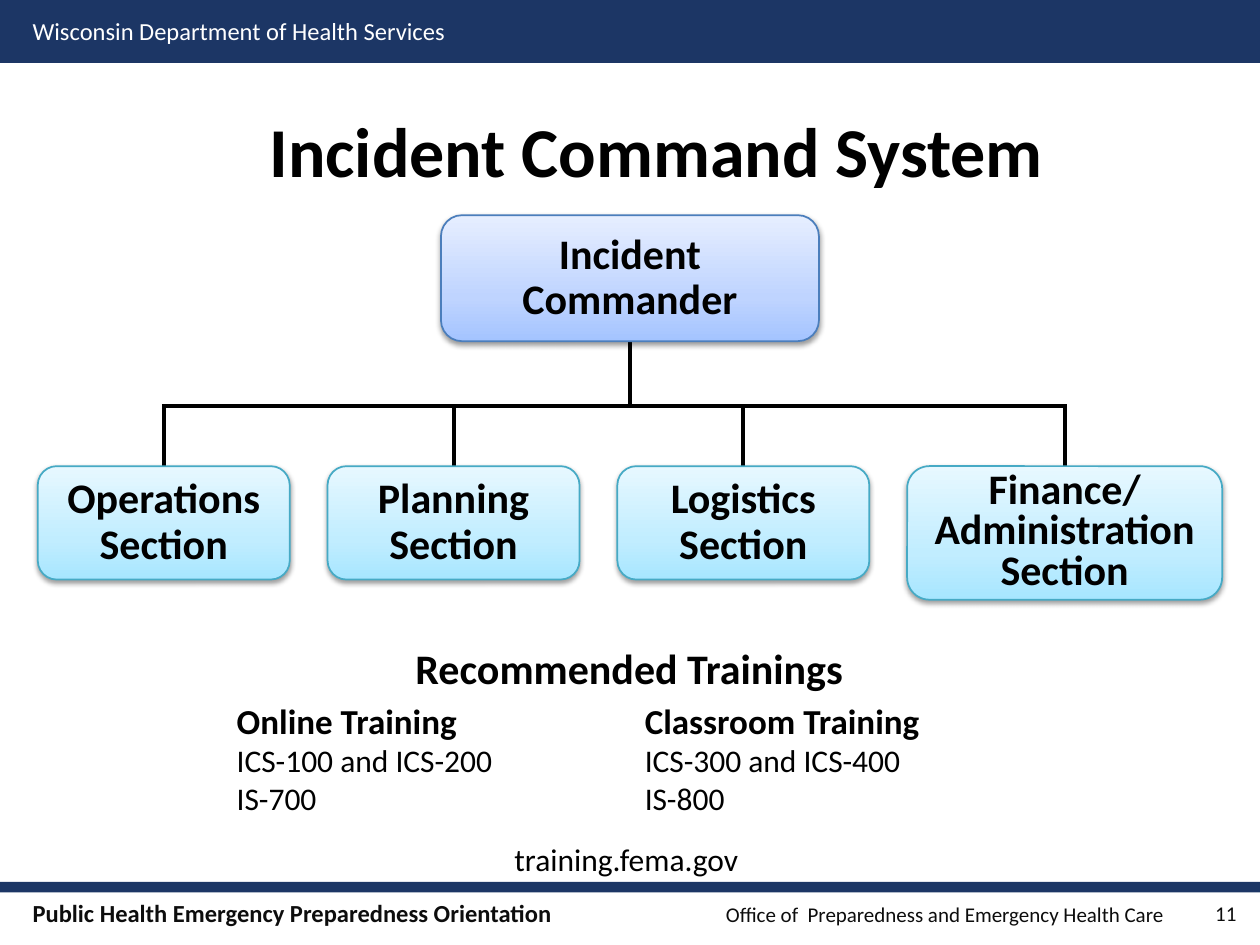
import pptx
import pptx.dml.color
import pptx.enum.shapes
import pptx.enum.text
import pptx.oxml
import pptx.oxml.ns
import pptx.util

Pt = pptx.util.Pt
ALIGN = pptx.enum.text.PP_ALIGN
ANCHOR = pptx.enum.text.MSO_ANCHOR
SHAPE = pptx.enum.shapes.MSO_SHAPE
NAMESPACE = pptx.oxml.ns.nsdecls("a")
NAVY, BLACK, INK, WHITE = "1C3665", "000000", "0D0D0D", "FFFFFF"
COMMAND_STYLE = {"line": "4B7EBC", "stops": ((0, "A4C4FF"), (35, "BFD4FF"), (100, "E6EEFF"))}
SECTION_STYLE = {"line": "46AAC5", "stops": ((0, "A7E6FF"), (35, "C1EDFF"), (100, "E7F8FF"))}


def color(value):
    """Turn a hex string into a color."""
    return pptx.dml.color.RGBColor.from_string(value)


class SlideBuilder:
    """Hold the text style and the current slide, and add elements to it."""

    def __init__(self, presentation, font_name):
        """Start a blank slide."""
        self.slide = presentation.slides.add_slide(presentation.slide_layouts[6])
        self.font_name = font_name

    def fill_text(self, frame, paragraphs, font_color=BLACK, anchor=ANCHOR.TOP, wrap=True, **paragraph_format):
        """Fill a text frame with paragraphs made of (text, size, bold) runs."""
        for name, value in {"word_wrap": wrap, "vertical_anchor": anchor}.items():
            setattr(frame, name, value)
        for index, runs in enumerate(paragraphs):
            paragraph = frame.add_paragraph() if index else frame.paragraphs[0]
            for name, value in paragraph_format.items():
                setattr(paragraph, name, value)
            for text, size, bold in runs:
                run = paragraph.add_run()
                run.text = text
                for name, value in {"name": self.font_name, "size": Pt(size), "bold": bold}.items():
                    setattr(run.font, name, value)
                run.font.color.rgb = color(font_color)

    def text(self, bounds, paragraphs, **text_format):
        """Add a text box and return it."""
        box = self.slide.shapes.add_textbox(*map(Pt, bounds))
        self.fill_text(box.text_frame, paragraphs, **text_format)
        return box

    def tabbed_text(self, bounds, runs, tab_position, **text_format):
        """Add one line of text with a right tab stop."""
        box = self.text(bounds, [runs], **text_format)
        properties = box.text_frame.paragraphs[0]._p.get_or_add_pPr()
        properties.append(pptx.oxml.parse_xml(
            f'<a:tabLst {NAMESPACE}><a:tab pos="{Pt(tab_position)}" algn="r"/></a:tabLst>'))

    def band(self, bounds):
        """Add a plain navy band."""
        shape = self.slide.shapes.add_shape(SHAPE.RECTANGLE, *map(Pt, bounds))
        shape.shadow.inherit = False
        shape.fill.solid()
        shape.fill.fore_color.rgb = color(NAVY)
        shape.line.fill.background()

    def line(self, start, end):
        """Add a straight black connector."""
        connector = self.slide.shapes.add_connector(
            pptx.enum.shapes.MSO_CONNECTOR.STRAIGHT, *map(Pt, start + end))
        connector.line.color.rgb = color(BLACK)
        connector.line.width = Pt(2.25)
        connector._element.spPr.append(pptx.oxml.parse_xml(f"<a:effectLst {NAMESPACE}/>"))

    def box(self, bounds, lines, style, spacing=0.9):
        """Add a rounded chart box with a gradient and a soft shadow."""
        shape = self.slide.shapes.add_shape(SHAPE.ROUNDED_RECTANGLE, *map(Pt, bounds))
        stops = "".join(f'<a:gs pos="{position * 1000}"><a:srgbClr val="{value}"/></a:gs>'
                        for position, value in style["stops"])
        properties = shape._element.spPr
        properties.append(pptx.oxml.parse_xml(
            f'<a:gradFill {NAMESPACE} rotWithShape="1"><a:gsLst>{stops}</a:gsLst>'
            '<a:lin ang="16200000" scaled="0"/></a:gradFill>'))
        shape.line.color.rgb = color(style["line"])
        shape.line.width = Pt(1)
        properties.append(pptx.oxml.parse_xml(
            f'<a:effectLst {NAMESPACE}><a:outerShdw blurRad="{Pt(3.1)}" dist="{Pt(1.6)}" dir="5400000" '
            f'rotWithShape="0"><a:srgbClr val="{BLACK}"><a:alpha val="38000"/></a:srgbClr>'
            '</a:outerShdw></a:effectLst>'))
        self.fill_text(shape.text_frame, [[(line, 24, True)] for line in lines],
                       anchor=ANCHOR.MIDDLE, alignment=ALIGN.CENTER, line_spacing=spacing)


def add_frame(builder):
    """Add the bands, header, footer and title."""
    builder.band((0, 504, 720, 6))
    builder.band((0, 0, 720, 36))
    builder.tabbed_text((11.5, 509.8, 661, 24.5),
                        [("Public Health Emergency Preparedness Orientation\t", 14, True),
                         ("Office of  Preparedness and Emergency Health Care", 12, False)],
                        646.6, font_color=INK)
    builder.text((11.5, 5.8, 252.7, 24.5), [[("Wisconsin Department of Health Services", 14, False)]],
                 font_color=WHITE)
    builder.text((66, 44.6, 618, 81.4), [[("Incident Command System", 40, True)]],
                 anchor=ANCHOR.MIDDLE, alignment=ALIGN.CENTER)
    builder.text((671.8, 509.8, 41.8, 24.5), [[("11", 12, False)]],
                 font_color=INK, anchor=ANCHOR.MIDDLE, alignment=ALIGN.RIGHT)


def add_organization(builder):
    """Add the commander, the four sections and the lines between them."""
    sections = [("Operations", "Section"), ("Planning", "Section"), ("Logistics", "Section"),
                ("Finance/", "Administration", "Section")]
    left, top, pitch, branch = 21.6, 266.4, 165.6, 232
    boxes = []
    for index, lines in enumerate(sections):
        width, height, spacing = (180, 76.3, 0.8) if len(lines) == 3 else (144, 64.8, 0.9)
        boxes.append(((left + index * pitch, top, width, height), lines, SECTION_STYLE, spacing))
    centers = [bounds[0] + bounds[2] / 2 for bounds, *_ in boxes]
    builder.line((360, 190), (360, branch))
    builder.line((centers[0] - 1.1, branch), (centers[-1] + 1.1, branch))
    for center in centers:
        builder.line((center, branch), (center, top + 4))
    builder.box((252, 123, 216, 72), ("Incident", "Commander"), COMMAND_STYLE)
    for section in boxes:
        builder.box(*section)


def add_trainings(builder):
    """Add the recommended trainings and the web address."""
    builder.text((126.7, 363.6, 465.8, 36), [[("Recommended Trainings", 24, True)]],
                 alignment=ALIGN.CENTER)
    trainings = {"Online Training": ("ICS-100 and ICS-200", "IS-700"),
                 "Classroom Training": ("ICS-300 and ICS-400", "IS-800")}
    for index, (heading, courses) in enumerate(trainings.items()):
        builder.text((128.2 + index * 233.2, 396, 232.6, 74.9),
                     [[(heading, 20, True)]] + [[(course, 18, False)] for course in courses])
    builder.text((283.8, 476.6, 148.3, 28.8), [[("training.fema.gov", 18, False)]],
                 wrap=False, alignment=ALIGN.CENTER)


def main():
    """Build and save the presentation."""
    presentation = pptx.Presentation()
    for name, value in {"slide_width": Pt(720), "slide_height": Pt(540)}.items():
        setattr(presentation, name, value)
    builder = SlideBuilder(presentation, "Calibri")
    add_frame(builder)
    add_organization(builder)
    add_trainings(builder)
    presentation.save("out.pptx")


if __name__ == "__main__":
    main()
